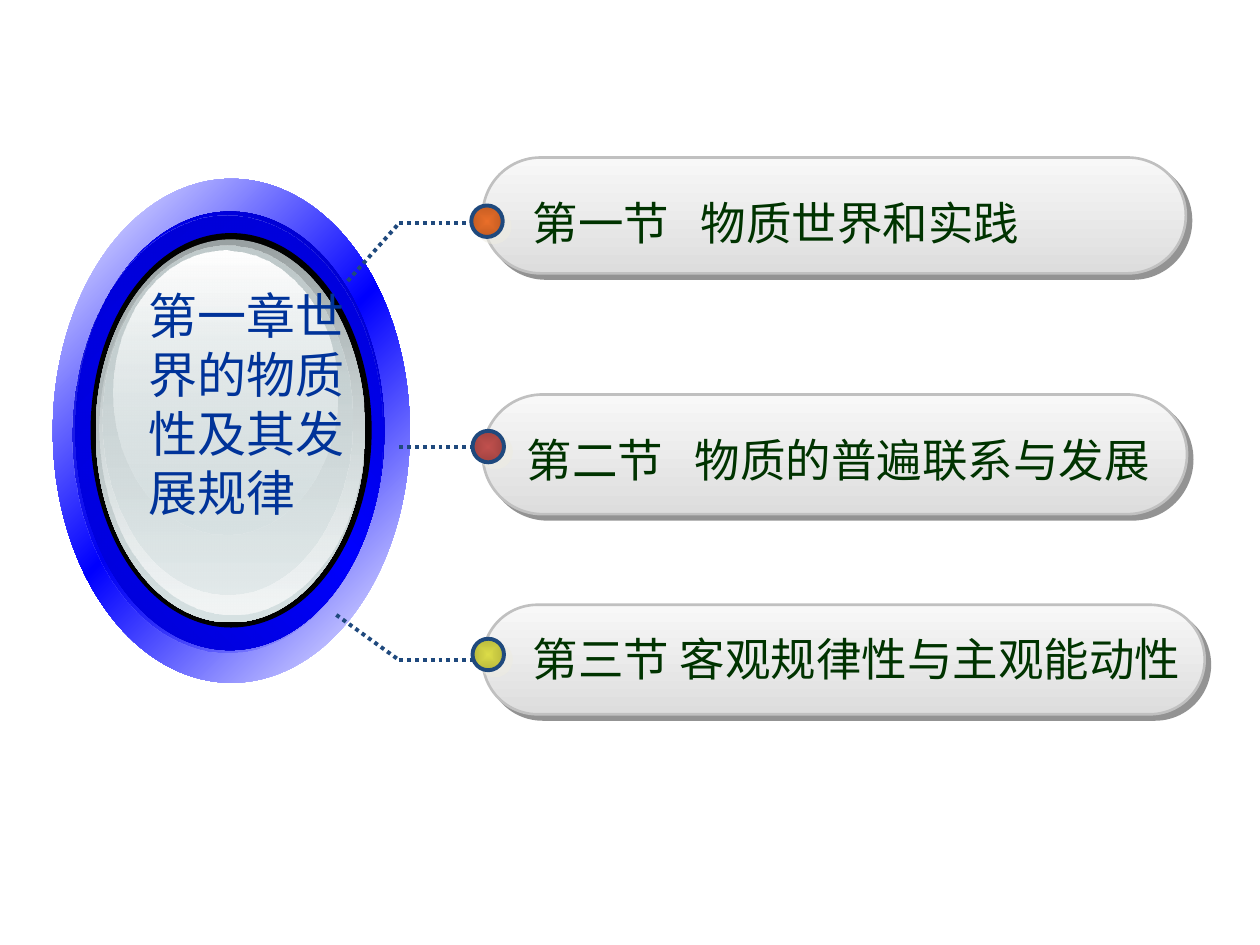
from lxml.etree import SubElement
from pptx import Presentation
from pptx.dml.color import RGBColor
from pptx.enum.dml import MSO_LINE
from pptx.enum.shapes import MSO_CONNECTOR, MSO_SHAPE
from pptx.enum.text import MSO_ANCHOR, MSO_AUTO_SIZE
from pptx.oxml.ns import qn
from pptx.util import Pt

COLORS = {
    "title": "003399", "label": "003300", "navy": "1F497D",
    "pill_top": "F8F8F8", "pill_bottom": "DDDDDD", "pill_line": "C0C0C0",
    "pill_shadow": "292929", "dot_shadow": "EEECE1",
}

# dx, dy, width, height, stops (position, colour, opacity), angle
RINGS = [
    (0, 0, 204, 288, [(0, "FFFFFF"), (50, "0000FF"), (100, "FFFFFF")], 45),
    (13, 18.7, 176.4, 250.6, [(0, "0000C3"), (50, "0000FF"), (100, "0000C3")], 315),
    (11.5, 20.9, 177.1, 249.8, [(0, "0000D1"), (100, "0000FF", 0)], 45),
    (21.6, 31, 160.6, 225.4, "000000", None),
    (24.5, 34.6, 154.1, 218.9, [(0, "99A1A2"), (100, "D6E1E2")], 90),
    (26.6, 36, 151.2, 213.1, [(0, "D6E1E2", 0), (100, "F2F5F5")], 90),
    (28.1, 38.2, 143.3, 199.4, [(0, "C1CBCC"), (100, "D6E1E2", 48)], 90),
    (34.6, 41, 128.2, 162, [(0, "FFFFFF"), (100, "D6E1E2", 38)], 90),
]

# pill box, text box in the pill, text, dot position in the pill, dot colours
SECTIONS = [
    ((275.8, 90, 401.8, 66.2), (21.6, 18, 362), "第一节\t物质世界和实践",
     (-6.5, 27.4), ("E96E29", "C35C22")),
    ((275.8, 225.4, 402.5, 68.4), (18, 18, 373), "第二节\t物质的普遍联系与发展",
     (-5.8, 20.8), ("C0504D", "A14341")),
    ((275.8, 345.6, 412.6, 62.6), (21.6, 11.5, 391), "第三节 客观规律性与主观能动性",
     (-5.8, 19.4), ("DCDC48", "B8B83C")),
]

ELBOW_X, LINE_END_X = 228.2, 276.5
# height of the level line, start of the slanted line if there is one
LEADERS = [(127.4, (198.7, 160.6)), (255.6, None), (377.3, (192.2, 351.4))]


def rgb(hex_color):
    return RGBColor.from_string(hex_color)


def add_color(parent, hex_color, opacity=100):
    color = SubElement(parent, qn("a:srgbClr"), val=hex_color)
    if opacity < 100:
        SubElement(color, qn("a:alpha"), val=str(opacity * 1000))


def set_gradient(sp, stops, angle):
    """Fill with a linear gradient, or a radial one if angle is None."""
    sp.fill.solid()
    solid = sp._element.spPr.find(qn("a:solidFill"))
    grad = SubElement(sp._element.spPr, qn("a:gradFill"), rotWithShape="1")
    solid.getparent().replace(solid, grad)
    stop_list = SubElement(grad, qn("a:gsLst"))
    for position, *color in stops:
        add_color(SubElement(stop_list, qn("a:gs"), pos=str(position * 1000)), *color)
    if angle is None:
        center = SubElement(grad, qn("a:path"), path="shape")
        SubElement(center, qn("a:fillToRect"), l="50000", t="50000", r="50000", b="50000")
    else:
        SubElement(grad, qn("a:lin"), ang=str(angle * 60000), scaled="0")


def add_shadow(sp, hex_color, distance, angle):
    effects = sp._element.spPr.find(qn("a:effectLst"))
    shadow = SubElement(effects, qn("a:outerShdw"), dist=str(int(Pt(distance))),
                        dir=str(angle * 60000), algn="ctr", rotWithShape="0")
    add_color(shadow, hex_color, 50)


def add_filled(slide, kind, box, fill, angle, line=None):
    sp = slide.shapes.add_shape(kind, *map(Pt, box))
    sp.shadow.inherit = False
    if isinstance(fill, str):
        sp.fill.solid()
        sp.fill.fore_color.rgb = rgb(fill)
    else:
        set_gradient(sp, fill, angle)
    if line:
        color, width = line
        sp.line.color.rgb = rgb(color)
        sp.line.width = Pt(width)
    else:
        sp.line.fill.background()
    return sp


def add_text(slide, box, text, size, font, color, tab=None):
    tf = slide.shapes.add_textbox(*map(Pt, box)).text_frame
    tf.word_wrap = True
    tf.auto_size = MSO_AUTO_SIZE.SHAPE_TO_FIT_TEXT
    tf.vertical_anchor = MSO_ANCHOR.TOP
    p = tf.paragraphs[0]
    if tab:
        tabs = SubElement(p._p.get_or_add_pPr(), qn("a:tabLst"))
        SubElement(tabs, qn("a:tab"), pos=str(int(Pt(tab))), algn="l")
    r = p.add_run()
    r.text = text
    r.font.size = Pt(size)
    r.font.name = font
    r.font.color.rgb = rgb(color)
    SubElement(r._r.get_or_add_rPr(), qn("a:ea"), typeface=font)


def add_medallion(slide, left, top):
    for dx, dy, width, height, fill, angle in RINGS:
        add_filled(slide, MSO_SHAPE.OVAL, (left + dx, top + dy, width, height), fill, angle)


def add_dotted_line(slide, start, end):
    line = slide.shapes.add_connector(MSO_CONNECTOR.STRAIGHT, *map(Pt, (*start, *end)))
    line.line.color.rgb = rgb(COLORS["navy"])
    line.line.width = Pt(2.25)
    line.line.dash_style = MSO_LINE.ROUND_DOT
    SubElement(line._element.spPr, qn("a:effectLst"))


def add_leader(slide, y, start):
    if start:
        add_dotted_line(slide, start, (ELBOW_X, y))
    add_dotted_line(slide, (ELBOW_X, y), (LINE_END_X, y))


def add_section(slide, box, text_box, text, dot, dot_colors):
    left, top = box[:2]
    stops = [(0, COLORS["pill_top"]), (100, COLORS["pill_bottom"])]
    pill = add_filled(slide, MSO_SHAPE.ROUNDED_RECTANGLE, box, stops, 90,
                      (COLORS["pill_line"], 1.5))
    pill.adjustments[0] = 0.5
    add_shadow(pill, COLORS["pill_shadow"], 4.2, 45)

    dx, dy, width = text_box
    add_text(slide, (left + dx, top + dy, width, 38), text, 26,
             "Noto Sans CJK JP", COLORS["label"], tab=96 if "\t" in text else None)

    dx, dy = dot
    marker = add_filled(slide, MSO_SHAPE.OVAL, (left + dx, top + dy, 18, 18),
                        list(zip((0, 100), dot_colors)), None, (COLORS["navy"], 2.25))
    add_shadow(marker, COLORS["dot_shadow"], 5, 37)


def main():
    prs = Presentation()
    prs.slide_width, prs.slide_height = Pt(720), Pt(540)
    slide = prs.slides.add_slide(prs.slide_layouts[6])
    left, top = 30.2, 102.2
    add_medallion(slide, left, top)
    for leader in LEADERS:
        add_leader(slide, *leader)
    add_text(slide, (left + 47.5, top + 57.6, 127, 175.7),
             "第一章世界的物质性及其发展规律", 28, "Arial", COLORS["title"])
    for section in SECTIONS:
        add_section(slide, *section)
    prs.save("out.pptx")


if __name__ == "__main__":
    main()
